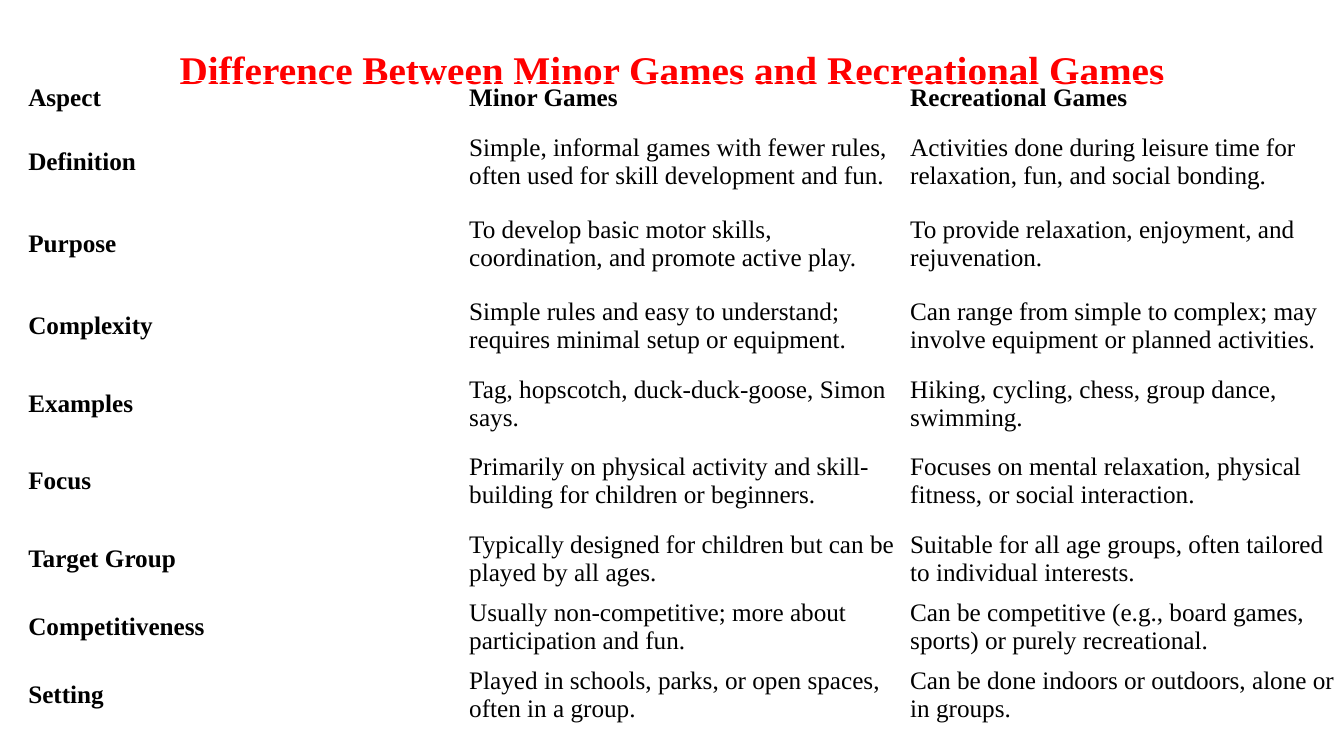
from typing import NamedTuple

from pptx import Presentation
from pptx.dml.color import RGBColor
from pptx.enum.text import MSO_ANCHOR, MSO_AUTO_SIZE, PP_ALIGN
from pptx.util import Pt

TOP, MIDDLE = MSO_ANCHOR.TOP, MSO_ANCHOR.MIDDLE
LEFT, CENTER = PP_ALIGN.LEFT, PP_ALIGN.CENTER
NO_AUTOFIT = MSO_AUTO_SIZE.NONE
TITLE_ONLY = 5

FONT = "Times New Roman"
COLORS = {"title": "FF0000", "text": "000000"}
COLUMN_WIDTH = 315


class Row(NamedTuple):
    height: float
    aspect: str
    minor: str
    recreational: str


ROWS = [
    Row(25.2, "Aspect", "Minor Games", "Recreational Games"),
    Row(65.5, "Definition",
        "Simple, informal games with fewer rules, often used for skill development and fun.",
        "Activities done during leisure time for relaxation, fun, and social bonding."),
    Row(51.8, "Purpose",
        "To develop basic motor skills, coordination, and promote active play.",
        "To provide relaxation, enjoyment, and rejuvenation."),
    Row(65.5, "Complexity",
        "Simple rules and easy to understand; requires minimal setup or equipment.",
        "Can range from simple to complex; may involve equipment or planned activities."),
    Row(45.4, "Examples",
        "Tag, hopscotch, duck-duck-goose, Simon says.",
        "Hiking, cycling, chess, group dance, swimming."),
    Row(65.5, "Focus",
        "Primarily on physical activity and skill-building for children or beginners.",
        "Focuses on mental relaxation, physical fitness, or social interaction."),
    Row(45.4, "Target Group",
        "Typically designed for children but can be played by all ages.",
        "Suitable for all age groups, often tailored to individual interests."),
    Row(51.8, "Competitiveness",
        "Usually non-competitive; more about participation and fun.",
        "Can be competitive (e.g., board games, sports) or purely recreational."),
    Row(45.4, "Setting",
        "Played in schools, parks, or open spaces, often in a group.",
        "Can be done indoors or outdoors, alone or in groups."),
]


def write(tf, text: str, *, size: float = 18, color: str = "text",
          bold: bool = False, align: PP_ALIGN = LEFT) -> None:
    p = tf.paragraphs[0]
    p.alignment = align
    r = p.add_run()
    r.text = text
    r.font.name = FONT
    r.font.size = Pt(size)
    r.font.bold = bold
    r.font.color.rgb = RGBColor.from_string(COLORS[color])


def add_title(s) -> None:
    sp = s.shapes.title
    sp.left, sp.top, sp.width, sp.height = Pt(66), Pt(28.8), Pt(828), Pt(104.4)
    tf = sp.text_frame
    tf.word_wrap = True
    tf.auto_size = NO_AUTOFIT
    tf.vertical_anchor = TOP
    write(tf, "Difference Between Minor Games and Recreational Games",
          size=28, color="title", bold=True, align=CENTER)


def add_comparison(s, rows: list[Row]) -> None:
    height = sum(row.height for row in rows)
    table = s.shapes.add_table(len(rows), 3, Pt(15.8), Pt(57.6),
                               Pt(3 * COLUMN_WIDTH), Pt(height)).table
    table.first_row = table.horz_banding = False
    for column in table.columns:
        column.width = Pt(COLUMN_WIDTH)
    for i, (row_height, *texts) in enumerate(rows):
        table.rows[i].height = Pt(row_height)
        for j, text in enumerate(texts):
            cell = table.cell(i, j)
            cell.fill.background()
            cell.vertical_anchor = MIDDLE
            cell.margin_left = cell.margin_right = Pt(4.4)
            cell.margin_top = cell.margin_bottom = Pt(2.2)
            write(cell.text_frame, text, bold=i == 0 or j == 0)


def main() -> None:
    prs = Presentation()
    prs.slide_width, prs.slide_height = Pt(960), Pt(540)
    s = prs.slides.add_slide(prs.slide_layouts[TITLE_ONLY])
    add_title(s)
    add_comparison(s, ROWS)
    prs.save("out.pptx")


if __name__ == "__main__":
    main()
